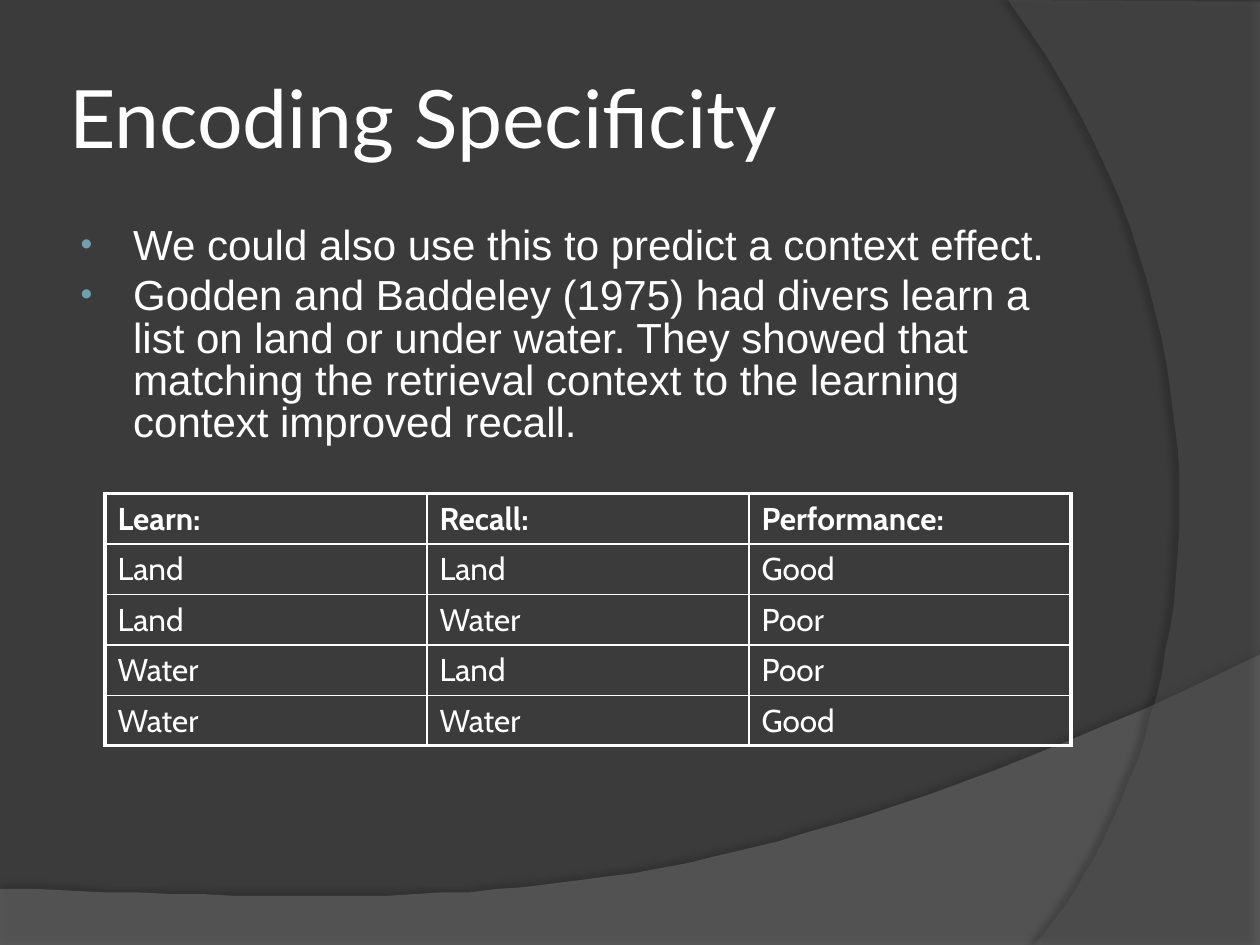
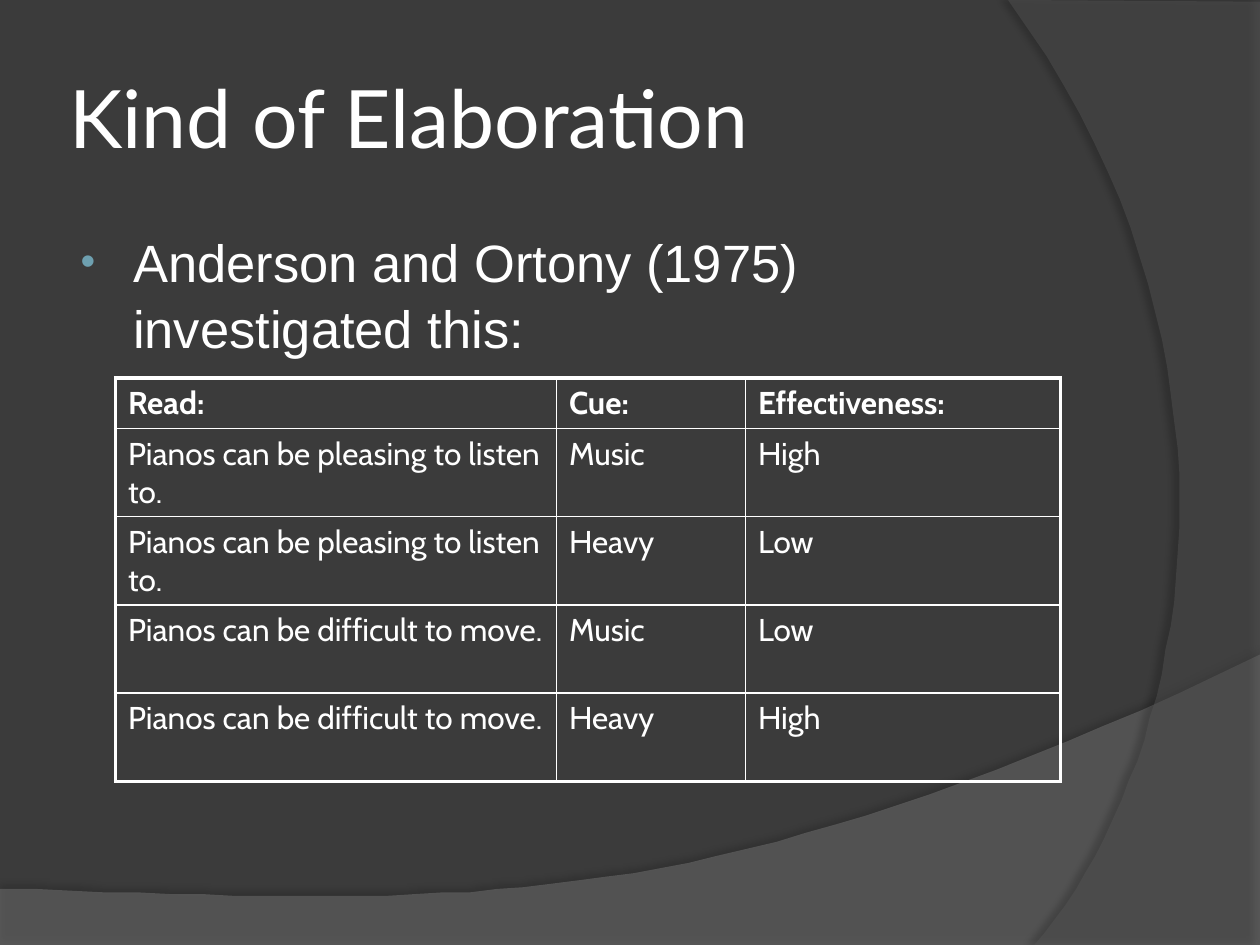
from lxml import etree
from pptx import Presentation
from pptx.dml.color import RGBColor
from pptx.enum import text
from pptx.oxml import ns
from pptx.util import Pt

# Shared look
BACKGROUND = RGBColor(0x3B, 0x3B, 0x3B)
WAVE_GREY = RGBColor(0x7C, 0x7C, 0x7C)
ARC_GREY = RGBColor(0x59, 0x59, 0x59)
BLACK = RGBColor(0, 0, 0)
WHITE = RGBColor(0xFF, 0xFF, 0xFF)
BULLET_BLUE = RGBColor(0x6E, 0xA0, 0xB0)
TITLE_FONT, BODY_FONT, TABLE_FONT = "Lato", "Arial", "Cabin"

# Boxes in points: left, top, width, height
WAVE_BOX = (0, 374.4, 720, 166.32)
ARC_BOX = (576, 0, 144, 540)
TITLE_BOX = (36, 21.6, 588, 90)
BODY_BOX = (36, 126, 588, 356.4)
OUTER_LINE, INNER_LINE = 2.25, 1
CURVE_STEPS = 40


def add_child(parent, tag, **attributes):
    child = etree.SubElement(parent, ns.qn(tag))
    for name, value in attributes.items():
        child.set(name, str(value))
    return child


def cubic_curve(start, control_1, control_2, end):
    """Points along a cubic curve, without its start."""
    points = []
    for step in range(1, CURVE_STEPS + 1):
        t = step / CURVE_STEPS
        weights = ((1 - t) ** 3, 3 * t * (1 - t) ** 2, 3 * t ** 2 * (1 - t), t ** 3)
        corners = (start, control_1, control_2, end)
        points.append(tuple(sum(w * c[axis] for w, c in zip(weights, corners))
                            for axis in (0, 1)))
    return points


def add_band(slide, box, outline, color, opacity, shadow_opacity, distance, direction):
    """Translucent outline with a soft shadow; points are relative to the box."""
    left, top = box[:2]
    points = [(left + x, top + y) for x, y in outline]
    builder = slide.shapes.build_freeform(*points[0], scale=Pt(1))
    builder.add_line_segments(points[1:], close=True)
    band = builder.convert_to_shape()
    band.fill.solid()
    band.fill.fore_color.rgb = color
    properties = band.element.spPr
    fill_color = properties.find(".//" + ns.qn("a:srgbClr"))
    add_child(fill_color, "a:alpha", val=opacity * 1000)
    band.line.fill.background()
    band.shadow.inherit = False
    shadow = add_child(properties.find(ns.qn("a:effectLst")), "a:outerShdw",
                       blurRad=Pt(4), dist=Pt(distance), dir=direction * 60000,
                       algn="ctr", rotWithShape=0)
    add_child(add_child(shadow, "a:srgbClr", val=BLACK), "a:alpha",
              val=shadow_opacity * 1000)
    return band


def decorate_master(master, slide):
    """Background and the two curved bands, kept on the master."""
    master.background.fill.solid()
    master.background.fill.fore_color.rgb = BACKGROUND
    width, height = WAVE_BOX[2:]
    wave = [(0, 133.2), (0, height), (width, height), (width, 0)]
    wave += cubic_curve((width, 0), (402.48, 150.48), (281.52, 143.28), (0, 133.2))
    width, height = ARC_BOX[2:]
    arc = [(width, 1.44), (width, height), (15.12, height)]
    arc += cubic_curve((15.12, height), (97.2, 445.68), (156.96, 216), (0, 0))
    bands = (add_band(slide, WAVE_BOX, wave, WAVE_GREY, 45, 35, 3.5, 270),
             add_band(slide, ARC_BOX, arc, ARC_GREY, 40, 45, 4, 180))
    for position, band in enumerate(bands, start=2):
        master.shapes.element.insert(position, band.element)


def style_font(paragraph, name, size, bold=False):
    font = paragraph.font
    font.name, font.size, font.bold = name, Pt(size), bold
    font.color.rgb = WHITE


def set_title(slide, box, wording):
    title = slide.shapes.title
    title.left, title.top, title.width, title.height = map(Pt, box)
    frame = title.text_frame
    frame.text = wording
    frame.vertical_anchor = text.MSO_ANCHOR.MIDDLE
    frame.auto_size = text.MSO_AUTO_SIZE.NONE
    frame.margin_left = frame.margin_right = Pt(3.6)
    frame.margin_top = frame.margin_bottom = Pt(3.6)
    paragraph = frame.paragraphs[0]
    paragraph.alignment = text.PP_ALIGN.LEFT
    style_font(paragraph, TITLE_FONT, 46)


def add_bullets(slide, box, wordings, size, line_spacing):
    frame = slide.shapes.add_textbox(*map(Pt, box)).text_frame
    frame.word_wrap = True
    frame.text = "\n".join(wordings)
    for paragraph in frame.paragraphs:
        style_font(paragraph, BODY_FONT, size)
        paragraph.line_spacing = line_spacing
        paragraph.space_before = Pt(size * 0.19)
        properties = paragraph._p.get_or_add_pPr()
        properties.set("marL", str(Pt(33)))
        properties.set("indent", str(Pt(-30)))
        bullet_color = etree.Element(ns.qn("a:buClr"))
        add_child(bullet_color, "a:srgbClr", val=BULLET_BLUE)
        bullet_parts = [bullet_color]
        for tag, name, value in (("a:buSzPct", "val", "80000"),
                                 ("a:buFont", "typeface", BODY_FONT),
                                 ("a:buChar", "char", "•")):
            bullet_parts.append(etree.Element(ns.qn(tag), {name: value}))
        # Bullet parts belong just before the run defaults
        run_defaults = properties.find(ns.qn("a:defRPr"))
        for part in bullet_parts:
            run_defaults.addprevious(part)


def set_borders(cell, outer_sides):
    """White borders, heavier on the sides at the table's edge."""
    properties = cell._tc.get_or_add_tcPr()
    for position, side in enumerate("LRTB"):
        width = OUTER_LINE if side in outer_sides else INNER_LINE
        line = etree.Element(ns.qn(f"a:ln{side}"), w=str(Pt(width)))
        add_child(add_child(line, "a:solidFill"), "a:srgbClr", val=WHITE)
        properties.insert(position, line)


def add_grid(slide, left, top, column_widths, row_heights, rows):
    """Outlined table with a bold heading row."""
    frame = slide.shapes.add_table(len(rows), len(column_widths), Pt(left), Pt(top),
                                   Pt(sum(column_widths)), Pt(sum(row_heights)))
    table = frame.table
    table.first_row = table.horz_banding = False
    for column, width in zip(table.columns, column_widths):
        column.width = Pt(width)
    for row, height in zip(table.rows, row_heights):
        row.height = Pt(height)
    last_row, last_column = len(rows) - 1, len(column_widths) - 1
    for r, wordings in enumerate(rows):
        for c, wording in enumerate(wordings):
            cell = table.cell(r, c)
            cell.text = wording
            style_font(cell.text_frame.paragraphs[0], TABLE_FONT, 18, bold=r == 0)
            cell.fill.background()
            edges = {"L": c == 0, "R": c == last_column,
                     "T": r == 0, "B": r == last_row}
            set_borders(cell, [side for side, at_edge in edges.items() if at_edge])


def build_encoding_slide(slide):
    set_title(slide, TITLE_BOX, "Encoding Specificity")
    add_bullets(slide, BODY_BOX, (
        "We could also use this to predict a context effect.",
        "Godden and Baddeley (1975) had divers learn a list on land or under water. "
        "They showed that matching the retrieval context to the learning context "
        "improved recall.",
    ), size=24, line_spacing=0.84)
    add_grid(slide, 60, 282, [184] * 3, [28.8] * 5, (
        ("Learn:", "Recall:", "Performance:"),
        ("Land", "Land", "Good"),
        ("Land", "Water", "Poor"),
        ("Water", "Land", "Poor"),
        ("Water", "Water", "Good"),
    ))


def build_elaboration_slide(slide):
    set_title(slide, TITLE_BOX, "Kind of Elaboration")
    add_bullets(slide, BODY_BOX, ("Anderson and Ortony (1975) investigated this:",),
                size=30, line_spacing=1.05)
    pleasing = "Pianos can be pleasing to listen to."
    difficult = "Pianos can be difficult to move."
    add_grid(slide, 66, 216, [252, 108, 180], [28.8] + [50.4] * 4, (
        ("Read:", "Cue:", "Effectiveness:"),
        (pleasing, "Music", "High"),
        (pleasing, "Heavy", "Low"),
        (difficult, "Music", "Low"),
        (difficult, "Heavy", "High"),
    ))


def main():
    presentation = Presentation()
    presentation.slide_width, presentation.slide_height = Pt(720), Pt(540)
    title_only = presentation.slide_layouts[5]
    builders = (build_encoding_slide, build_elaboration_slide)
    slides = [presentation.slides.add_slide(title_only) for _ in builders]
    decorate_master(presentation.slide_master, slides[0])
    for build, slide in zip(builders, slides):
        build(slide)
    presentation.save("out.pptx")


if __name__ == "__main__":
    main()
